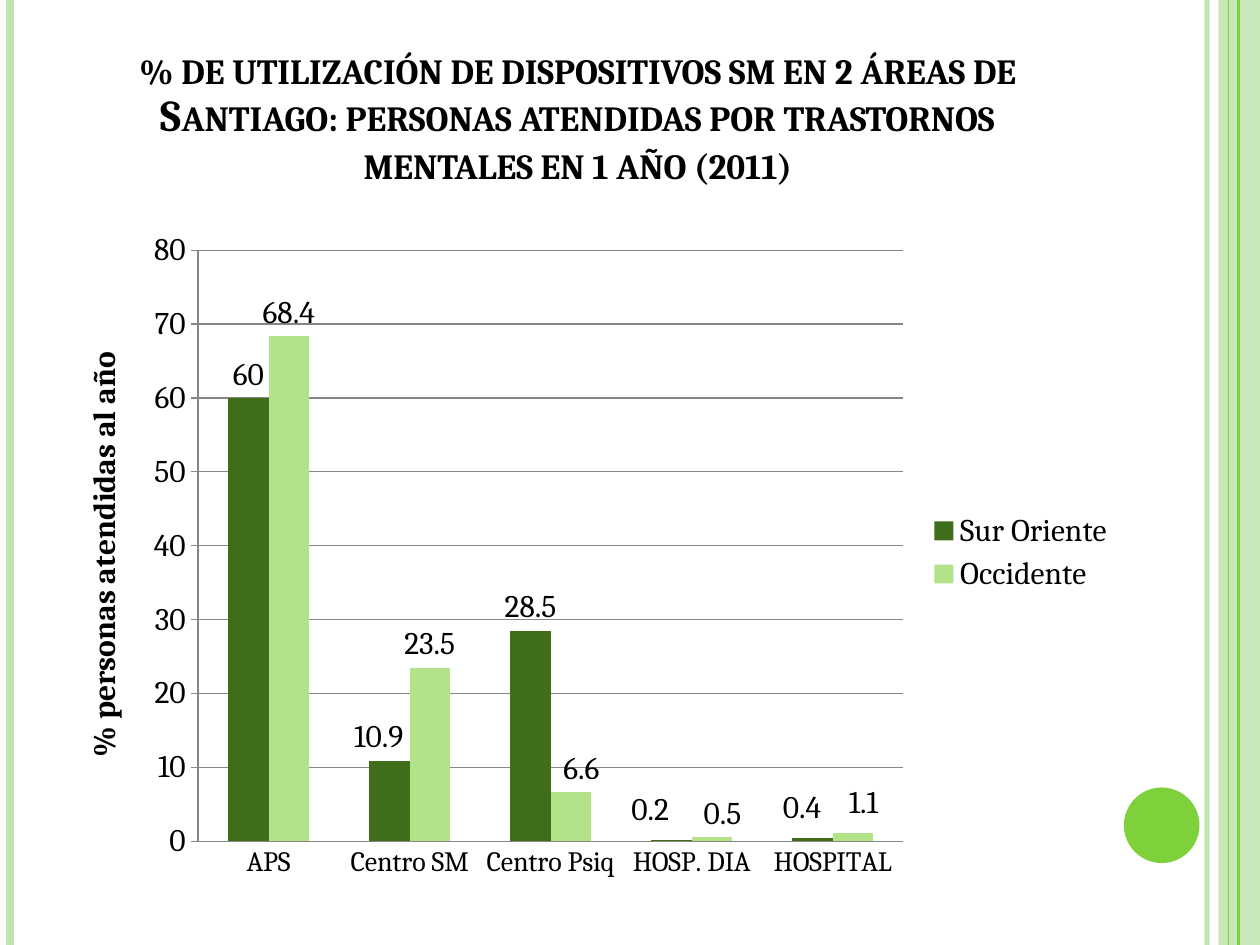
import pptx
import pptx.util
import pptx.dml.color
import pptx.chart.data
import pptx.enum.chart
import pptx.enum.shapes
import pptx.enum.text
import pptx.oxml
import pptx.oxml.ns

Inches = pptx.util.Inches
Pt = pptx.util.Pt
enum = pptx.enum.chart
qn = pptx.oxml.ns.qn


def paint(fill, tone, alpha=100):
    fill.solid()
    fill.fore_color.rgb = pptx.dml.color.RGBColor.from_string(tone)
    if alpha < 100:
        node = next(fill._xPr.iter(qn("a:srgbClr")))
        node.append(node.makeelement(qn("a:alpha"), {"val": str(alpha * 1000)}))


def place(parent, left, top, width, height, inner=False):
    fields = [("xMode", "edge"), ("yMode", "edge")] if inner else []
    if inner:
        fields.insert(0, ("layoutTarget", "inner"))
    fields += [("x", left), ("y", top)]
    if inner:
        fields += [("w", width), ("h", height)]
    for old in parent.findall(qn("c:layout")):
        parent.remove(old)
    layout = parent.makeelement(qn("c:layout"), {})
    manual = layout.makeelement(qn("c:manualLayout"), {})
    layout.append(manual)
    for name, value in fields:
        manual.append(manual.makeelement(qn("c:" + name), {"val": str(value)}))
    parent.insert(0 if inner else 1, layout)


deck = pptx.Presentation()
deck.slide_width = Inches(10)
deck.slide_height = Inches(7.5)
slide = deck.slides.add_slide(deck.slide_layouts[5])
shapes = slide.shapes

band = shapes.add_shape(pptx.enum.shapes.MSO_SHAPE.RECTANGLE,
                        Inches(9.67), 0, Inches(0.33), Inches(7.5))
paint(band.fill, "C0E5AF", 87)
disc = shapes.add_shape(pptx.enum.shapes.MSO_SHAPE.OVAL,
                        Inches(8.92), Inches(6.25), Inches(0.6), Inches(0.6))
paint(disc.fill, "7FD13B")
for shape in (band, disc):
    shape.shadow.inherit = False
    shape.line.fill.background()

for left, tone, width, alpha in [(9.58, "C0E5AF", 3, 93), (0.08, "C0E5AF", 4.5, 100),
                                 (9.83, "7FD13B", 1.5, 100), (9.75, "7FD13B", 0.75, 100)]:
    rule = shapes.add_connector(pptx.enum.shapes.MSO_CONNECTOR.STRAIGHT,
                                Inches(left), 0, Inches(left), Inches(7.5))
    rule.line.width = Pt(width)
    paint(rule.line.fill, tone, alpha)
    props = rule._element.spPr
    props.append(props.makeelement(qn("a:effectLst"), {}))

title = shapes.title
title.left, title.top = Inches(0.5), Inches(0.3)
title.width, title.height = Inches(8.17), Inches(1.25)
frame = title.text_frame
frame.text = ("% de utilización de dispositivos sm en 2 áreas de Santiago: "
              "personas atendidas por trastornos mentales en 1 año (2011)")
frame.word_wrap = True
frame.auto_size = pptx.enum.text.MSO_AUTO_SIZE.NONE
frame.vertical_anchor = pptx.enum.text.MSO_ANCHOR.BOTTOM
head = frame.paragraphs[0]
head.alignment = pptx.enum.text.PP_ALIGN.CENTER
head.line_spacing = 0.9
head.font.name = "Cambria"
head.font.size = Pt(25.2)
head.font.bold = True
paint(head.font.fill, "000000")
head.runs[0]._r.get_or_add_rPr().set("cap", "small")

data = pptx.chart.data.CategoryChartData()
data.categories = ["APS", "Centro SM", "Centro Psiq", "HOSP. DIA", "HOSPITAL"]
data.add_series("Sur Oriente", [60, 10.9, 28.5, 0.2, 0.4])
data.add_series("Occidente", [68.4, 23.5, 6.6, 0.5, 1.1])
chart = shapes.add_chart(enum.XL_CHART_TYPE.COLUMN_CLUSTERED, Inches(0.47), Inches(1.72),
                         Inches(8.48), Inches(5.33), data).chart
chart.has_title = False
chart.font.name = "Cambria"
chart.font.size = Pt(18)
paint(chart.font.fill, "000000")
chart.has_legend = True
chart.legend.position = enum.XL_LEGEND_POSITION.RIGHT
chart.legend.include_in_layout = False
place(chart._chartSpace.chart.plotArea, 0.13, 0.05, 0.66, 0.88, True)

cats = chart.category_axis
cats.major_tick_mark = enum.XL_TICK_MARK.NONE
cats.tick_labels.font.size = Pt(16)
vals = chart.value_axis
vals.minimum_scale, vals.maximum_scale, vals.major_unit = 0, 80, 10
vals.major_tick_mark = enum.XL_TICK_MARK.CROSS
vals.has_major_gridlines = True
for part in (cats, vals, vals.major_gridlines):
    paint(part.format.line.fill, "868686")
    part.format.line.width = Pt(0.75)
label = vals.axis_title.text_frame
label.text = "% personas atendidas al año"
font = label.paragraphs[0].font
font.name, font.size, font.bold = "Cambria", Pt(18), True

plot = chart.plots[0]
plot.gap_width = 150
plot.overlap = 0
plot.vary_by_categories = False
shifts = [{1: (-0.01, 0), 3: (-0.02, -0.01), 4: (-0.01, -0.01)},
          {2: (0.01, 0), 3: (0.01, 0), 4: (0.01, -0.01)}]
for series, tone, moves in zip(plot.series, ["3F6D19", "B2E389"], shifts):
    paint(series.format.fill, tone)
    series.invert_if_negative = False
    labels = series.data_labels
    labels.show_value = True
    labels.position = enum.XL_LABEL_POSITION.OUTSIDE_END
    for index, (across, down) in moves.items():
        series.points[index].data_label.position = enum.XL_LABEL_POSITION.OUTSIDE_END
        place(labels._element.findall(qn("c:dLbl"))[-1], across, down, 0, 0)

deck.save("out.pptx")
